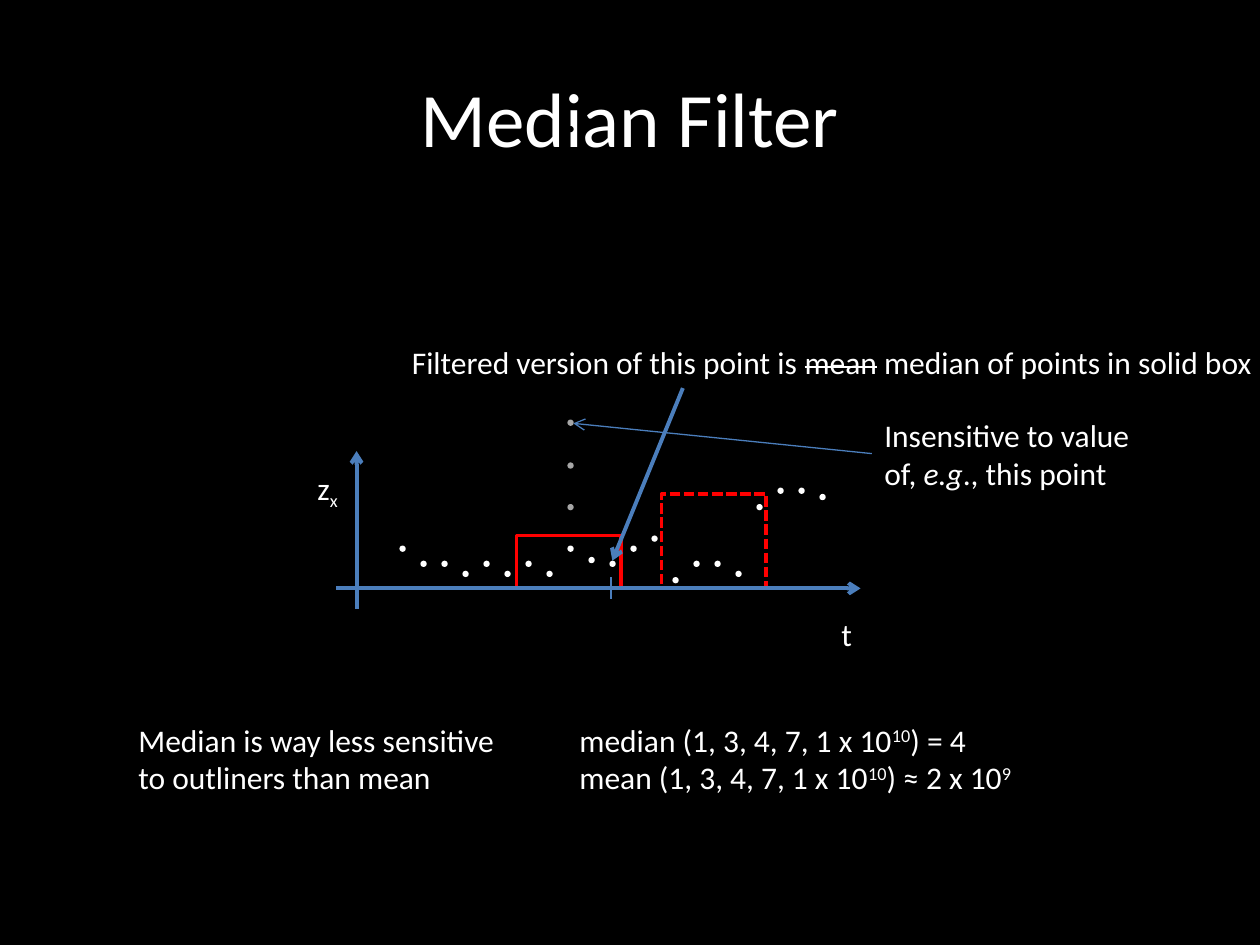
from lxml.etree import SubElement
from pptx import Presentation
from pptx.dml.color import RGBColor
from pptx.enum.dml import MSO_LINE
from pptx.enum.shapes import MSO_CONNECTOR, MSO_SHAPE
from pptx.enum.text import MSO_ANCHOR, MSO_AUTO_SIZE, PP_ALIGN
from pptx.oxml.ns import qn
from pptx.util import Inches, Pt

BLACK, WHITE, GRAY, RED, BLUE = "000000", "FFFFFF", "A6A6A6", "FF0000", "4B7EBC"
AXIS_Y = 4.67
DOT_SIZE, DOT_LEFT, DOT_STEP = 0.05, 3.17, 1 / 6
OUTLIER_COLUMN = 8

SUPER, SUB, STRIKE = {"baseline": "30000"}, {"baseline": "-25000"}, {"strike": "sngStrike"}
ITALIC = {"i": "1"}

TITLE = (0.5, 0.3, 9, 1.25), [[("Median Filter", {})]]
LABELS = [
    ((2.42, 3.67, 0.38, 0.4), False, [[("z", {}), ("x", SUB)]]),
    ((6.58, 4.83, 0.29, 0.4), False, [[("t", {})]]),
    ((3.17, 2.67, 6.95, 0.4), False, [[
        ("Filtered version of this point is ", {}), ("mean", STRIKE),
        (" median of points in solid box", {})]]),
    ((6.92, 3.25, 2.34, 0.71), True, [[
        ("Insensitive to value of, ", {}), ("e.g", ITALIC), ("., this point", {})]]),
    ((4.5, 5.67, 3.71, 0.71), False, [
        [("median (1, 3, 4, 7, 1 x 10", {}), ("10", SUPER), (") = 4", {})],
        [("mean (1, 3, 4, 7, 1 x 10", {}), ("10", SUPER), (") ≈ 2 x 10", {}), ("9", SUPER)]]),
    ((1, 5.67, 3.25, 0.71), True, [
        [("Median is way less sensitive to outliners than mean", {})]]),
]
WINDOWS = [(5.25, 3.92, MSO_LINE.SQUARE_DOT), (4.1, 4.25, MSO_LINE.SOLID)]
WINDOW_WIDTH = 0.83
AXES = [((2.67, AXIS_Y), (6.83, AXIS_Y), 2.25, True),
        ((2.83, 4.83), (2.83, 3.58), 2.25, True)]
POINTERS = [((4.85, 4.58), (4.85, 4.75), 0.75, False),
            ((5.42, 3.08), (4.86, 4.45), 2.25, True),
            ((6.92, 3.6), (4.55, 3.36), 0.75, True)]
SAMPLES = [4.33, 4.45, 4.45, 4.53, 4.45, 4.53, 4.45, 4.53, 4.33, 4.42, 4.45,
           4.33, 4.25, 4.58, 4.45, 4.45, 4.53, 4, 3.87, 3.87, 3.92]
OUTLIERS = [(4, GRAY), (3.67, GRAY), (3.33, GRAY), (1, BLACK)]


def color(value):
    """Turn a hex string into a colour."""
    return RGBColor.from_string(value)


def add_text(slide, box, paragraphs, size=18, wrap=True):
    """Add a text box run by run and return its frame."""
    frame = slide.shapes.add_textbox(*map(Inches, box)).text_frame
    frame.word_wrap = wrap
    frame.auto_size = MSO_AUTO_SIZE.SHAPE_TO_FIT_TEXT
    for index, runs in enumerate(paragraphs):
        paragraph = frame.add_paragraph() if index else frame.paragraphs[0]
        for text, attributes in runs:
            run = paragraph.add_run()
            run.text = text
            run.font.size = Pt(size)
            run.font.name = "Calibri"
            run.font.color.rgb = color(WHITE)
            for name, value in attributes.items():
                run._r.get_or_add_rPr().set(name, value)
    return frame


def add_title(slide):
    """Add the centred heading."""
    box, paragraphs = TITLE
    frame = add_text(slide, box, paragraphs, 44)
    frame.auto_size = MSO_AUTO_SIZE.NONE
    frame.vertical_anchor = MSO_ANCHOR.MIDDLE
    frame.paragraphs[0].alignment = PP_ALIGN.CENTER


def add_window(slide, left, top, dash):
    """Add an unfilled filter window standing on the time axis."""
    box = left, top, WINDOW_WIDTH, AXIS_Y - top
    shape = slide.shapes.add_shape(MSO_SHAPE.RECTANGLE, *map(Inches, box))
    shape.shadow.inherit = False
    shape.fill.background()
    shape.line.color.rgb = color(RED)
    shape.line.width = Pt(2)
    shape.line.dash_style = dash


def add_line(slide, start, end, width, arrow):
    """Add a straight line with an optional arrowhead at its end."""
    connector = slide.shapes.add_connector(
        MSO_CONNECTOR.STRAIGHT, *map(Inches, start + end))
    connector.line.color.rgb = color(BLUE)
    connector.line.width = Pt(width)
    if arrow:
        SubElement(connector.line._get_or_add_ln(), qn("a:tailEnd"), type="arrow")
    SubElement(connector._element.spPr, qn("a:effectLst"))


def add_dot(slide, column, top, fill):
    """Add one sample dot in its time column."""
    box = DOT_LEFT + column * DOT_STEP, top, DOT_SIZE, DOT_SIZE
    shape = slide.shapes.add_shape(MSO_SHAPE.OVAL, *map(Inches, box))
    shape.shadow.inherit = False
    shape.fill.solid()
    shape.fill.fore_color.rgb = color(fill)
    shape.line.fill.background()


def main():
    """Build and save the slide."""
    presentation = Presentation()
    presentation.slide_width, presentation.slide_height = Inches(10), Inches(7.5)
    slide = presentation.slides.add_slide(presentation.slide_layouts[6])
    slide.background.fill.solid()
    slide.background.fill.fore_color.rgb = color(BLACK)
    add_title(slide)
    for window in WINDOWS:
        add_window(slide, *window)
    for axis in AXES:
        add_line(slide, *axis)
    for column, top in enumerate(SAMPLES):
        add_dot(slide, column, top, WHITE)
    for box, wrap, paragraphs in LABELS:
        add_text(slide, box, paragraphs, wrap=wrap)
    for top, fill in OUTLIERS:
        add_dot(slide, OUTLIER_COLUMN, top, fill)
    for pointer in POINTERS:
        add_line(slide, *pointer)
    presentation.save("out.pptx")


if __name__ == "__main__":
    main()
